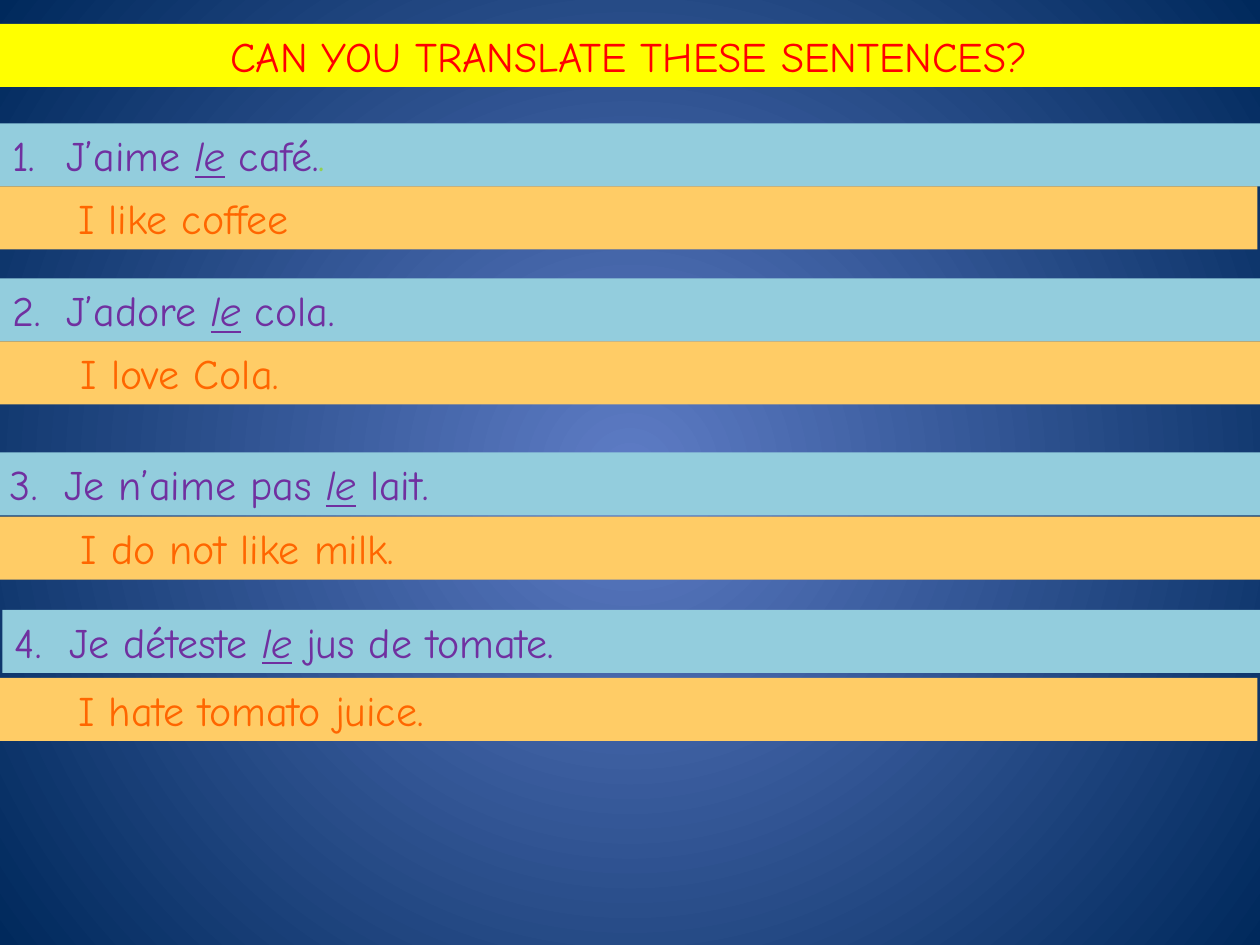
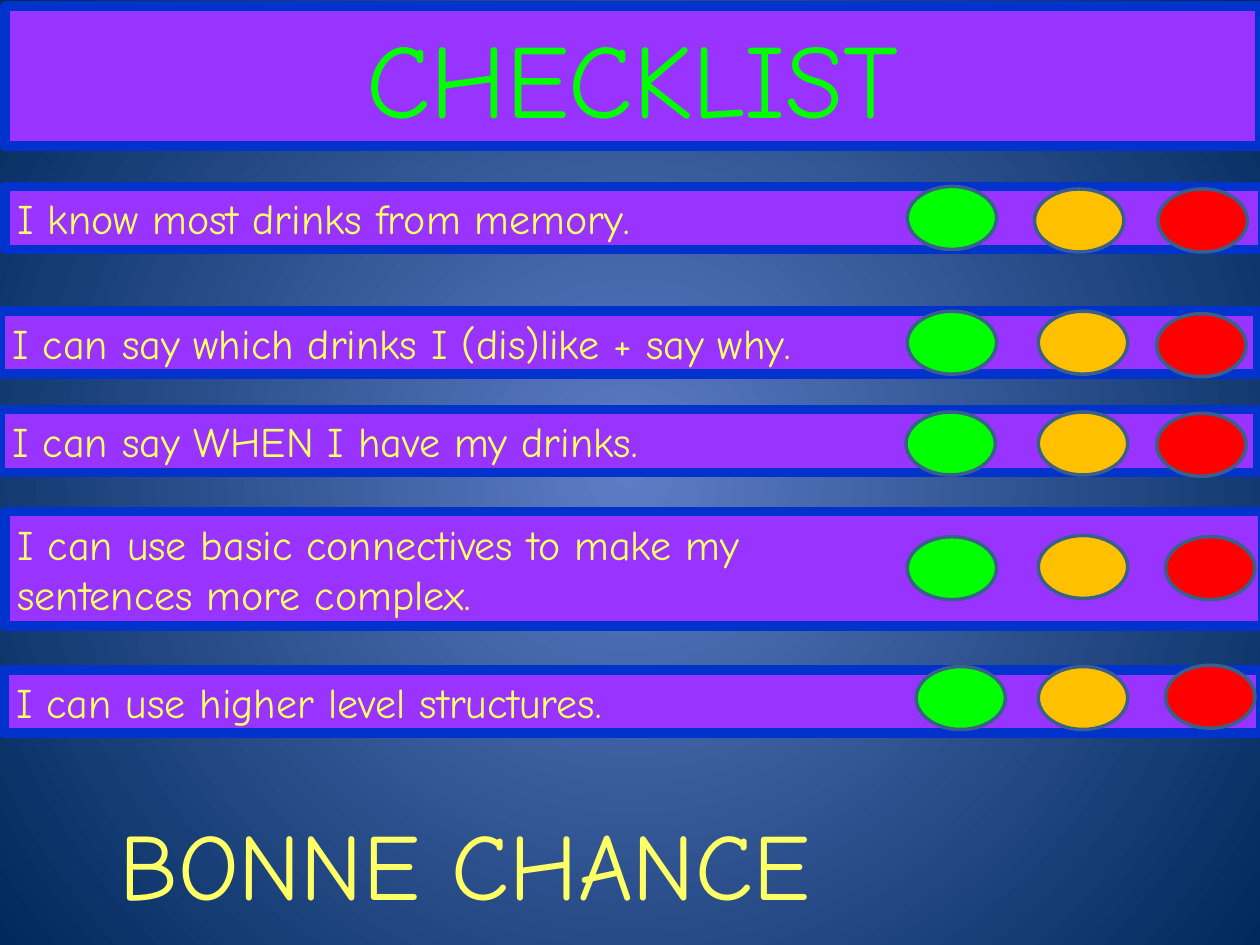
from dataclasses import dataclass

from lxml import etree
from pptx import Presentation
from pptx.dml.color import RGBColor
from pptx.enum import shapes, text
from pptx.oxml.ns import qn
from pptx.util import Inches, Pt


@dataclass(frozen=True)
class Theme:
    font: str = "Comic Neue"
    body: int = 24
    closing: int = 54
    heading: int = 60
    glow: str = "5E7CC5"
    navy: str = "00295C"
    yellow: str = "FFFF00"
    red: str = "FF0000"
    sky: str = "93CDDD"
    purple: str = "7030A0"
    lime: str = "92D050"
    sand: str = "FFCC66"
    orange: str = "FF6600"
    violet: str = "9933FF"
    blue: str = "0033CC"
    green: str = "00FF00"
    amber: str = "FFC000"
    lemon: str = "FFFF66"
    outline: str = "3A5F8C"
    frame_width: float = 5.5
    light_width: float = 2


T = Theme()
BAND_H = 0.5
NUMBER_INDENT = 0.43
ANSWER_MARGIN = 0.64
LIGHT_W, LIGHT_H = 0.71, 0.5

# Question box, French words around "le", answer box, English sentence
SENTENCES = [
    ((0, 0.98, 10), "J’aime ", " café.", (-0.02, 1.48), "I like coffee"),
    ((0, 2.21, 10), "J’adore ", " cola.", (0, 2.71), "I love Cola."),
    ((-0.02, 3.59, 10.05), "Je n’aime pas ", " lait.", (0, 4.1), "I do not like milk."),
    ((0.02, 4.84, 10), "Je déteste ", " jus de tomate.", (-0.02, 5.38), "I hate tomato juice."),
]

# Band left, top and height, its lines, and the places of its three lights
SKILLS = [
    (0.04, 1.48, BAND_H, ["I know most drinks from memory."],
     [(7.2, 1.48), (8.21, 1.5), (9.19, 1.5)]),
    (0, 2.47, BAND_H, ["I can say which drinks I (dis)like + say why."],
     [(7.2, 2.47), (8.24, 2.47), (9.18, 2.49)]),
    (0, 3.25, BAND_H, ["I can say WHEN I have my drinks."],
     [(7.19, 3.27), (8.24, 3.27), (9.18, 3.28)]),
    (0.04, 4.06, 0.91, ["I can use basic connectives to make my", "sentences more complex."],
     [(7.2, 4.26), (8.24, 4.25), (9.25, 4.26)]),
    (0.03, 5.32, BAND_H, ["I can use higher level structures."],
     [(7.27, 5.29), (8.24, 5.29), (9.25, 5.28)]),
]


def add_slide(prs):
    """Blank slide with the shared radial background."""
    slide = prs.slides.add_slide(prs.slide_layouts[6])
    fill = slide.background.fill
    fill.gradient()
    for stop, color, position in zip(fill.gradient_stops, (T.glow, T.navy), (0, 1)):
        stop.color.rgb = RGBColor.from_string(color)
        stop.position = position
    grad = next(slide.element.iter(qn("a:gradFill")))
    grad.remove(grad.find(qn("a:lin")))
    radial = etree.SubElement(grad, qn("a:path"), path="circle")
    etree.SubElement(radial, qn("a:fillToRect"), dict.fromkeys("ltrb", "50000"))
    return slide


def add_figure(slide, kind, box, fill, line=None, width=0):
    sp = slide.shapes.add_shape(kind, *map(Inches, box))
    sp.shadow.inherit = False
    sp.fill.solid()
    sp.fill.fore_color.rgb = RGBColor.from_string(fill)
    if line:
        sp.line.color.rgb = RGBColor.from_string(line)
        sp.line.width = Pt(width)
    else:
        sp.line.fill.background()
    return sp


def write(sp, lines, color, size=T.body, align=text.PP_ALIGN.LEFT):
    """Each line is a list of (words, format changes) runs."""
    tf = sp.text_frame
    tf.word_wrap = True
    tf.auto_size = text.MSO_AUTO_SIZE.SHAPE_TO_FIT_TEXT
    for i, runs in enumerate(lines):
        p = tf.paragraphs[0] if i == 0 else tf.add_paragraph()
        p.alignment = align
        for words, changes in runs:
            r = p.add_run()
            r.text = words
            style = {"name": T.font, "size": Pt(size), "color": color, **changes}
            r.font.color.rgb = RGBColor.from_string(style.pop("color"))
            for name, value in style.items():
                setattr(r.font, name, value)
    return tf


def add_band(slide, box, fill, lines, color, frame=None, **style):
    sp = add_figure(slide, shapes.MSO_SHAPE.RECTANGLE, box, fill, frame, T.frame_width)
    return write(sp, lines, color, **style)


def add_question(slide, number, place, before, after):
    runs = [(f"{number}.\t{before}", {}), ("le", {"italic": True, "underline": True}), (after, {})]
    if number == 1:
        runs.append((".", {"color": T.lime}))
    tf = add_band(slide, (*place, BAND_H), T.sky, [runs], T.purple)
    # Hanging indent: the tab after the number stops at the margin
    ppr = tf.paragraphs[0]._p.get_or_add_pPr()
    ppr.set("marL", str(Inches(NUMBER_INDENT)))
    ppr.set("indent", str(-Inches(NUMBER_INDENT)))


def add_answer(slide, place, sentence):
    tf = add_band(slide, (*place, 10, BAND_H), T.sand, [[(sentence, {})]], T.orange)
    tf.margin_left = Inches(ANSWER_MARGIN)


def add_lights(slide, places):
    for place, color in zip(places, (T.green, T.amber, T.red)):
        add_figure(slide, shapes.MSO_SHAPE.OVAL, (*place, LIGHT_W, LIGHT_H),
                   color, T.outline, T.light_width)


def build_translation(prs):
    slide = add_slide(prs)
    add_band(slide, (-0.02, 0.19, 10.02, BAND_H), T.yellow,
             [[("CAN YOU TRANSLATE THESE SENTENCES?", {})]], T.red,
             align=text.PP_ALIGN.CENTER)
    for number, (place, before, after, _, _) in enumerate(SENTENCES, 1):
        add_question(slide, number, place, before, after)
    for _, _, _, place, sentence in SENTENCES:
        add_answer(slide, place, sentence)


def build_checklist(prs):
    slide = add_slide(prs)
    add_band(slide, (0.04, 0.05, 9.96, 1.11), T.violet, [[("CHECKLIST", {})]], T.green,
             T.blue, size=T.heading, align=text.PP_ALIGN.CENTER)
    for left, top, height, lines, lights in SKILLS:
        add_band(slide, (left, top, 9.98, height), T.violet,
                 [[(line, {})] for line in lines], T.lemon, T.blue)
        add_lights(slide, lights)
    # Closing wish
    wish = slide.shapes.add_textbox(*map(Inches, (0.85, 6.35, 6.77, 1.01)))
    write(wish, [[("BONNE CHANCE", {})]], T.lemon, size=T.closing)


def main():
    prs = Presentation()
    prs.slide_width, prs.slide_height = Inches(10), Inches(7.5)
    build_translation(prs)
    build_checklist(prs)
    prs.save("out.pptx")


if __name__ == "__main__":
    main()
